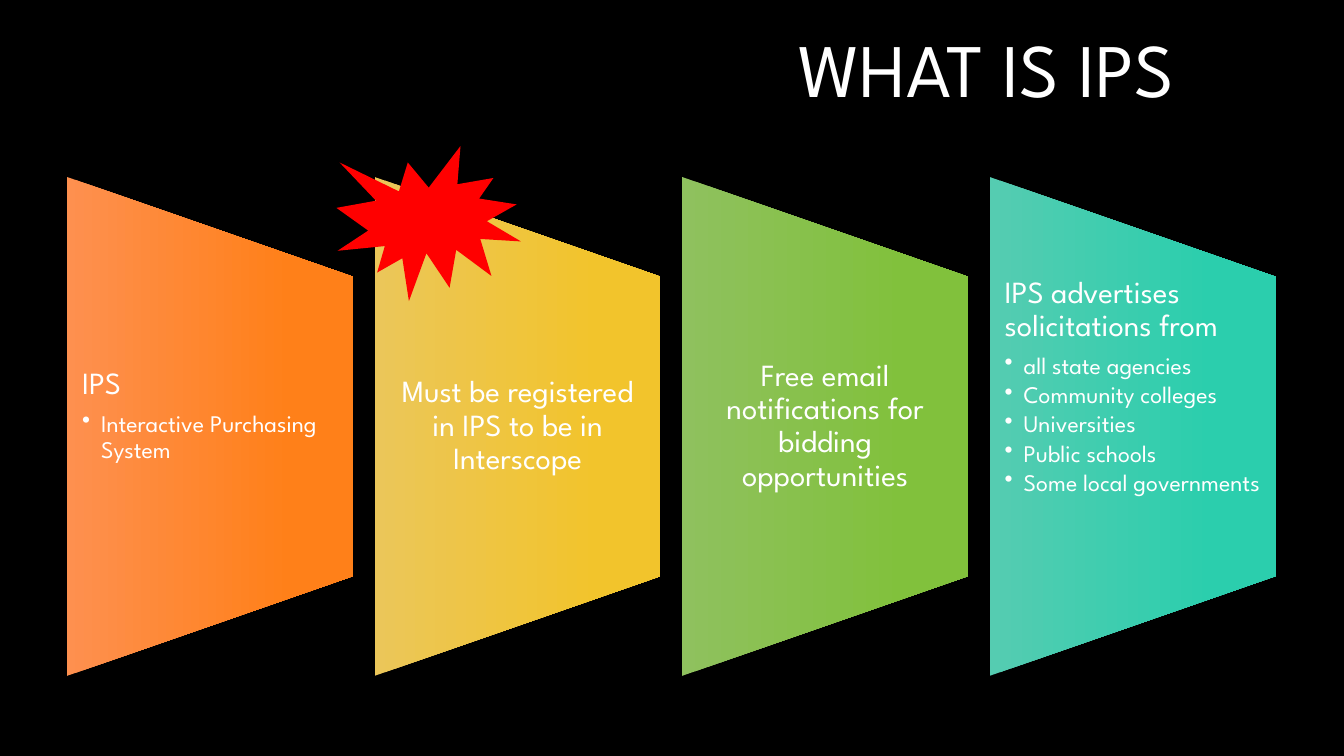
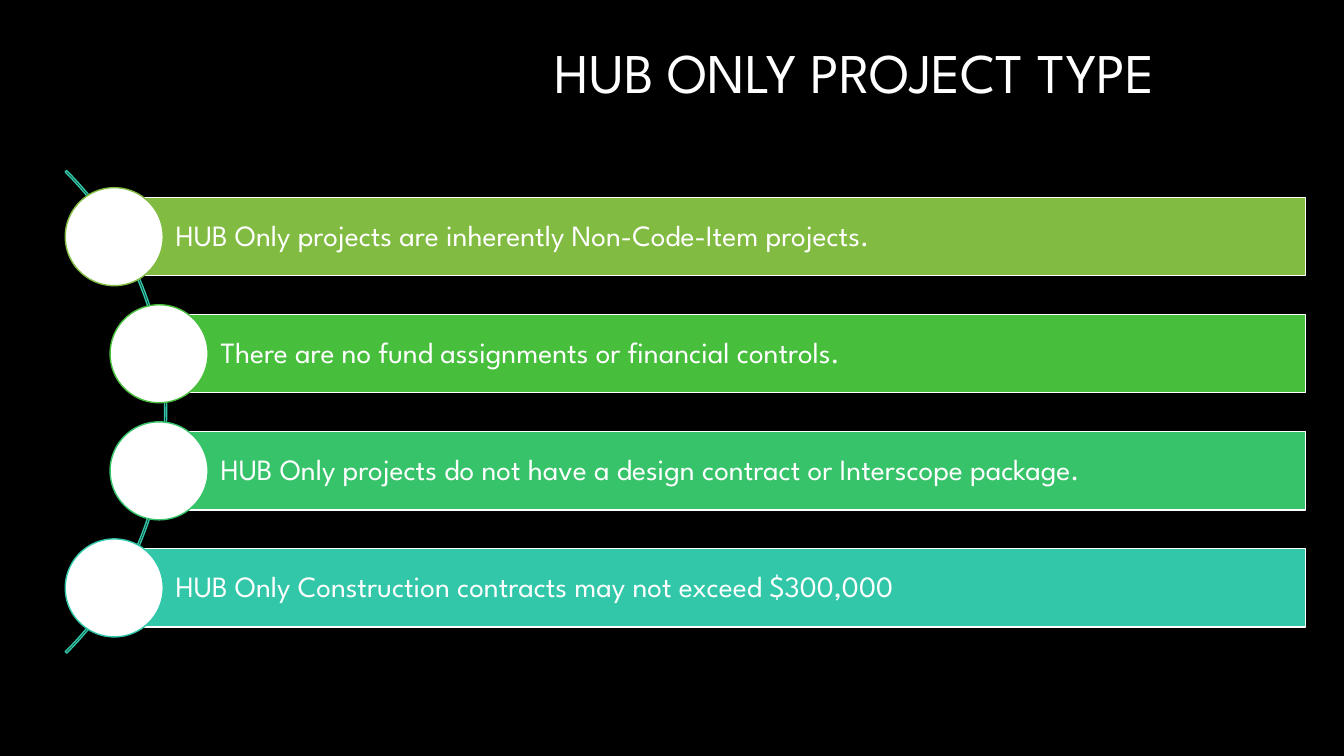
import pptx
import pptx.dml.color
import pptx.enum.shapes
import pptx.enum.text
import pptx.util
from lxml import etree

Cm = pptx.util.Cm
Pt = pptx.util.Pt
SHAPE = pptx.enum.shapes.MSO_SHAPE
ALIGN = pptx.enum.text.PP_ALIGN
ANCHOR = pptx.enum.text.MSO_ANCHOR

FONT = "League Spartan"
WHITE = "FFFFFF"
BLACK = "000000"
RED = "FF0000"
TEAL = "32C7A9"

PANEL_LEFT, PANEL_TOP = 1.69, 4.46
PANEL_WIDTH, PANEL_HEIGHT, PANEL_PITCH = 7.21, 12.57, 7.75
PANEL_TEXT_TOP, PANEL_TEXT_HEIGHT = 6.97, 7.54
PANEL_INSETS = (0.38, 0, 0.38, 0)
PANELS = [
    ("FE904F", "FF8019", "IPS", ["Interactive Purchasing System"], 2.3),
    ("EBC659", "F2C42C", "Must be registered in IPS to be in Interscope", [], 0),
    ("8FC15E", "81C13C", "Free email notifications for bidding opportunities", [], 0),
    ("55CCB1", "2BCEAD", "IPS advertises solicitations from",
     ["all state agencies", "Community colleges", "Universities",
      "Public schools", "Some local governments"], 0),
]

BAR_TOP, BAR_HEIGHT, BAR_PITCH, BAR_RIGHT = 4.98, 1.97, 2.95, 32.9
BAR_INSETS = (1.55, 0.15, 0.15, 0.15)
CIRCLE_SIZE = 2.47
BARS = [
    (2.88, "81BB42", "HUB Only projects are inherently Non-Code-Item projects."),
    (4.01, "47BF3D", "There are no fund assignments or financial controls."),
    (4.01, "37C369",
     "HUB Only projects do not have a design contract or Interscope package."),
    (2.88, TEAL, "HUB Only Construction contracts may not exceed $300,000"),
]


def color(value):
    return pptx.dml.color.RGBColor.from_string(value)


def add_shape(slide, kind, left, top, width, height, fill=None, line=None):
    shape = slide.shapes.add_shape(kind, Cm(left), Cm(top), Cm(width), Cm(height))
    shape.shadow.inherit = False
    if fill:
        shape.fill.solid()
        shape.fill.fore_color.rgb = color(fill)
    else:
        shape.fill.background()
    if line:
        shape.line.color.rgb = color(line)
        shape.line.width = Pt(1)
    else:
        shape.line.fill.background()
    return shape


def add_text_box(slide, left, top, width, height):
    return slide.shapes.add_textbox(Cm(left), Cm(top), Cm(width), Cm(height))


def prepare_frame(shape, anchor=ANCHOR.MIDDLE, insets=(0.25, 0.13, 0.25, 0.13)):
    frame = shape.text_frame
    frame.word_wrap = True
    frame.vertical_anchor = anchor
    (frame.margin_left, frame.margin_top,
     frame.margin_right, frame.margin_bottom) = map(Cm, insets)
    return frame


def add_bullet(paragraph, indent=0.48):
    properties = paragraph._p.get_or_add_pPr()
    properties.set("marL", str(Cm(indent)))
    properties.set("indent", str(-Cm(indent)))
    bullet = etree.SubElement(properties, pptx.oxml.ns.qn("a:buChar"))
    bullet.set("char", "•")


def write_text(frame, text, size=22, align=ALIGN.LEFT, after=0, bullet=False):
    paragraph = frame.paragraphs[0]
    if paragraph.runs:
        paragraph = frame.add_paragraph()
    if bullet:
        add_bullet(paragraph)
    paragraph.alignment = align
    paragraph.line_spacing = 0.9
    paragraph.space_after = Pt(after)
    run = paragraph.add_run()
    run.text = text
    run.font.name = FONT
    run.font.size = Pt(size)
    run.font.color.rgb = color(WHITE)


def add_slide(presentation, title, left, top, size):
    slide = presentation.slides.add_slide(presentation.slide_layouts[6])
    slide.background.fill.solid()
    slide.background.fill.fore_color.rgb = color(BLACK)
    box = add_text_box(slide, left, top, 25.8, 2.92)
    write_text(prepare_frame(box), title, size=size, align=ALIGN.RIGHT)
    return slide


def fill_gradient(shape, start, end):
    shape.fill.gradient()
    shape.fill.gradient_angle = 270
    for stop, value, position in zip(shape.fill.gradient_stops, (start, end), (0, 0.78)):
        stop.color.rgb = color(value)
        stop.position = position


def add_panel(slide, left, start, end, heading, bullets, text_drop):
    shift = (PANEL_HEIGHT - PANEL_WIDTH) / 2
    panel = add_shape(slide, SHAPE.FLOWCHART_MANUAL_OPERATION, left - shift,
                      PANEL_TOP + shift, PANEL_HEIGHT, PANEL_WIDTH)
    panel.rotation = 270
    fill_gradient(panel, start, end)
    box = add_text_box(slide, left, PANEL_TEXT_TOP + text_drop,
                       PANEL_WIDTH, PANEL_TEXT_HEIGHT - text_drop)
    anchor, align = (ANCHOR.TOP, ALIGN.LEFT) if bullets else (ANCHOR.MIDDLE, ALIGN.CENTER)
    frame = prepare_frame(box, anchor, PANEL_INSETS)
    write_text(frame, heading, align=align, after=7.7)
    for bullet in bullets:
        write_text(frame, bullet, size=17, after=2.5, bullet=True)


def add_bar(slide, left, top, fill, text):
    bar = add_shape(slide, SHAPE.RECTANGLE, left, top, BAR_RIGHT - left, BAR_HEIGHT,
                    fill=fill, line=WHITE)
    write_text(prepare_frame(bar, insets=BAR_INSETS), text, size=21)
    add_shape(slide, SHAPE.OVAL, left - CIRCLE_SIZE / 2,
              top + (BAR_HEIGHT - CIRCLE_SIZE) / 2, CIRCLE_SIZE, CIRCLE_SIZE,
              fill=WHITE, line=fill)


def build_ips_slide(presentation):
    slide = add_slide(presentation, "WHAT IS IPS", 4.04, 0.38, 54)
    for index, panel in enumerate(PANELS):
        add_panel(slide, PANEL_LEFT + index * PANEL_PITCH, *panel)
    add_shape(slide, SHAPE.EXPLOSION1, 8.48, 3.68, 4.65, 3.91, fill=RED)


def build_hub_slide(presentation):
    slide = add_slide(presentation, "HUB ONLY PROJECT TYPE", 3.56, 0.43, 40)
    arc = add_shape(slide, SHAPE.BLOCK_ARC, -13, 1.78, 17.2, 17.2, line=TEAL)
    for index, value in enumerate((189, 27, 0.003)):
        arc.adjustments[index] = value
    for index, (left, fill, text) in enumerate(BARS):
        add_bar(slide, left, BAR_TOP + index * BAR_PITCH, fill, text)


def main():
    presentation = pptx.Presentation()
    presentation.slide_width = Cm(33.87)
    presentation.slide_height = Cm(19.05)
    build_ips_slide(presentation)
    build_hub_slide(presentation)
    presentation.save("out.pptx")


if __name__ == "__main__":
    main()
